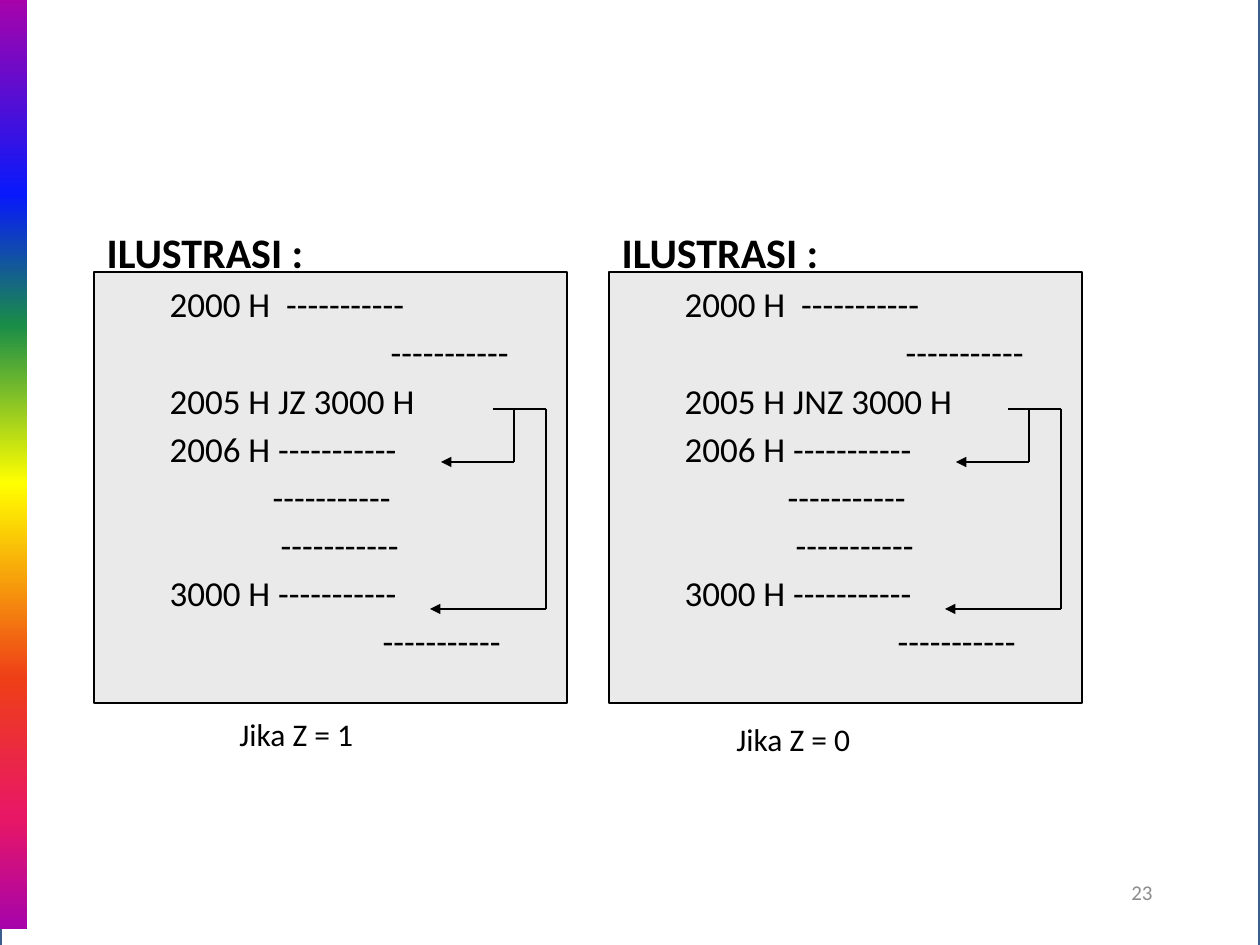
from pptx import Presentation, util as u
from pptx.dml.color import RGBColor
from pptx.enum import shapes as sh, text as tx
from pptx.oxml.ns import qn
from lxml import etree

# Content: code rows as (text, indent in px)
HEAD = "ILUSTRASI :"
DASH = "-----------"
STEP = 63
PANELS = [
    {"jump": "JZ", "note": "Jika Z = 1", "at": (227, 709)},
    {"jump": "JNZ", "note": "Jika Z = 0", "at": (724, 714)},
]
PAGE = "23"
COL = {"white": "FFFFFF", "edge": "3A5F8C", "panel": "EAEAEA",
       "ink": "000000", "page": "8C8C8C"}
RAINBOW = [(0, "A603AB"), (21, "0819FB"), (35, "1A8D48"), (52, "FFFF00"),
           (73, "EE3F17"), (88, "E81766"), (100, "A603AB")]

# Layout in px; arrow points are x from the panel's left edge, y on the slide
LEFT, TOP, WIDE, HIGH, PITCH = 94, 272, 473, 431, 515
LINES = [
    ((399, 409), (452, 409), False),
    ((452, 409), (452, 609), False),
    ((452, 609), (336, 609), True),
    ((420, 409), (420, 462), False),
    ((420, 462), (347, 462), True),
]


def px(n):
    return u.Emu(round(n * 914400 / 126))


def rgb(name):
    return RGBColor.from_string(COL[name])


def style(font, **vals):
    font.name = "Calibri"
    for key, val in vals.items():
        if key == "color":
            font.color.rgb = rgb(val)
        else:
            setattr(font, key, val)


def rect(box, fill=None, line=None, width=0.75):
    shape = slide.shapes.add_shape(sh.MSO_SHAPE.RECTANGLE, *map(px, box))
    shape.shadow.inherit = False
    if fill:
        shape.fill.solid()
        shape.fill.fore_color.rgb = rgb(fill)
    if line:
        shape.line.color.rgb = rgb(line)
        shape.line.width = u.Pt(width)
    else:
        shape.line.fill.background()
    return shape


def label(box, words, size, color, **vals):
    frame = slide.shapes.add_textbox(*map(px, box)).text_frame
    for key, val in vals.items():
        if key == "align":
            frame.paragraphs[0].alignment = val
        else:
            setattr(frame, key, val)
    run = frame.paragraphs[0].add_run()
    run.text = words
    style(run.font, size=u.Pt(size), color=color)


def wire(start, end, arrow):
    line = slide.shapes.add_connector(
        sh.MSO_CONNECTOR.STRAIGHT, *map(px, start + end))
    line.line.color.rgb = rgb("ink")
    line.line.width = u.Pt(0.75)
    if arrow:
        ln = line.line._get_or_add_ln()
        etree.SubElement(ln, qn("a:tailEnd"), type="triangle")
    etree.SubElement(line._element.spPr, qn("a:effectLst"))


def listing(body, left, jump):
    rows = [
        (HEAD, 0),
        ("2000 H  " + DASH, STEP),
        (DASH, 284),
        (f"2005 H {jump} 3000 H", STEP),
        ("2006 H " + DASH, STEP),
        (DASH, 166),
        (DASH, 174),
        ("3000 H " + DASH, STEP),
        (DASH, 276),
    ]
    body.left, body.top, body.width, body.height = map(
        px, (left, 220, 483, 464))
    frame = body.text_frame
    frame.auto_size = tx.MSO_AUTO_SIZE.NONE
    frame.vertical_anchor = tx.MSO_ANCHOR.TOP
    for i, (words, indent) in enumerate(rows):
        par = frame.paragraphs[0] if i == 0 else frame.add_paragraph()
        par.alignment = tx.PP_ALIGN.JUSTIFY
        par.space_before = u.Pt(3.5 if i else 0)
        ppr = par._p.get_or_add_pPr()
        ppr.set("marL", str(int(px(indent))))
        ppr.set("indent", "0")
        etree.SubElement(ppr, qn("a:buNone"))
        run = par.add_run()
        run.text = words
        style(run.font, size=u.Pt(20 if i else 24), bold=i == 0, color="ink")


deck = Presentation()
deck.slide_width, deck.slide_height = px(1260), px(945)
slide = deck.slides.add_slide(deck.slide_layouts[3])
tree = slide.shapes._spTree
tree.remove(slide.shapes.title._element)
bodies = list(slide.placeholders)

# Page frame and rainbow strip
page = rect((0, -14, 1260, 983), "white", "edge", 2)
tone = page._element.spPr.find(qn("a:solidFill"))[0]
etree.SubElement(tone, qn("a:alpha"), val="96000")

strip = rect((0, 0, 27, 929))
strip.fill.gradient()
strip.fill.gradient_angle = 270
stops = strip._element.spPr.find(qn("a:gradFill")).find(qn("a:gsLst"))
for old in list(stops):
    stops.remove(old)
for pos, tint in RAINBOW:
    stop = etree.SubElement(stops, qn("a:gs"), pos=str(pos * 1000))
    etree.SubElement(stop, qn("a:srgbClr"), val=tint)

# Two panels with code, jump arrows and caption
for i, (panel, body) in enumerate(zip(PANELS, bodies)):
    left = LEFT + i * PITCH
    rect((left, TOP, WIDE, HIGH), "panel", "ink")
    tree.append(body._element)
    listing(body, left, panel["jump"])
    for (x1, y1), (x2, y2), arrow in LINES:
        wire((left + x1, y1), (left + x2, y2), arrow)
    label(panel["at"] + (195, 63), panel["note"], 18, "ink", word_wrap=False)

# Page number
label((903, 861, 262, 63), PAGE, 12, "page", word_wrap=True,
      vertical_anchor=tx.MSO_ANCHOR.MIDDLE, align=tx.PP_ALIGN.RIGHT)

deck.save("out.pptx")
